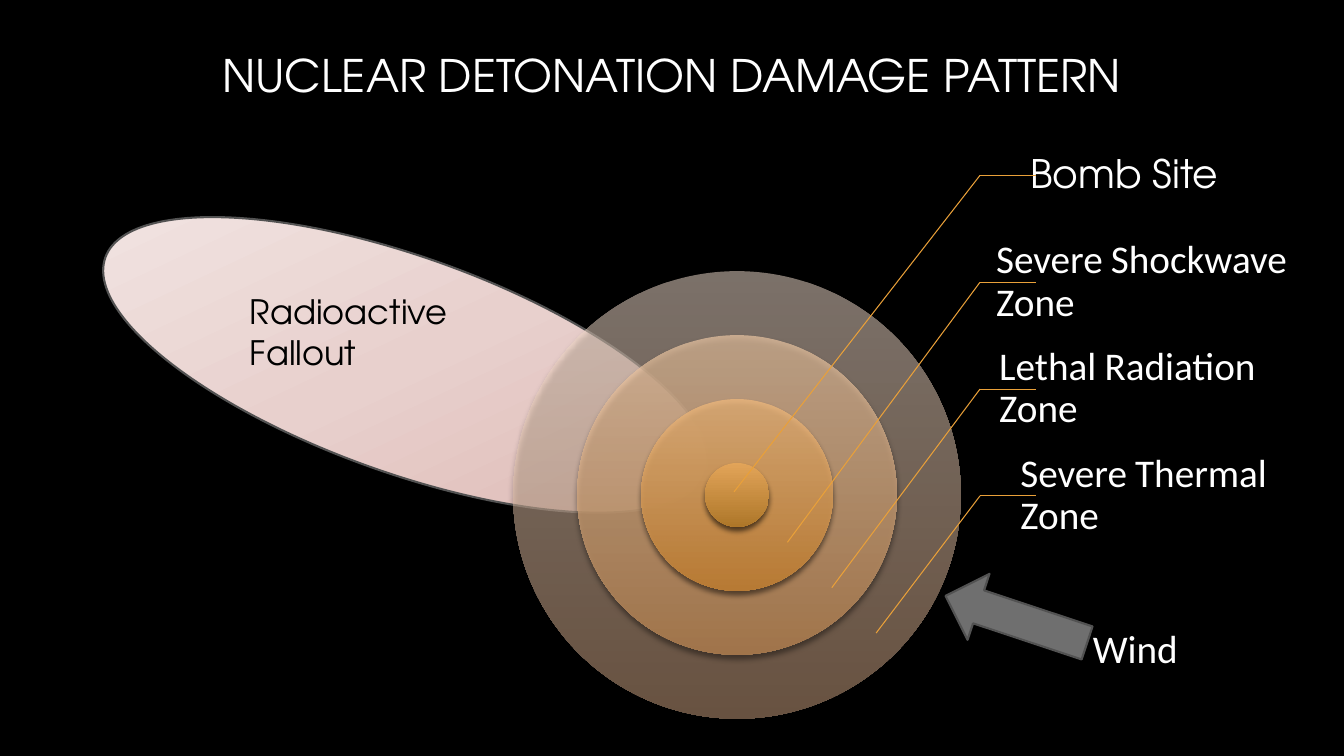
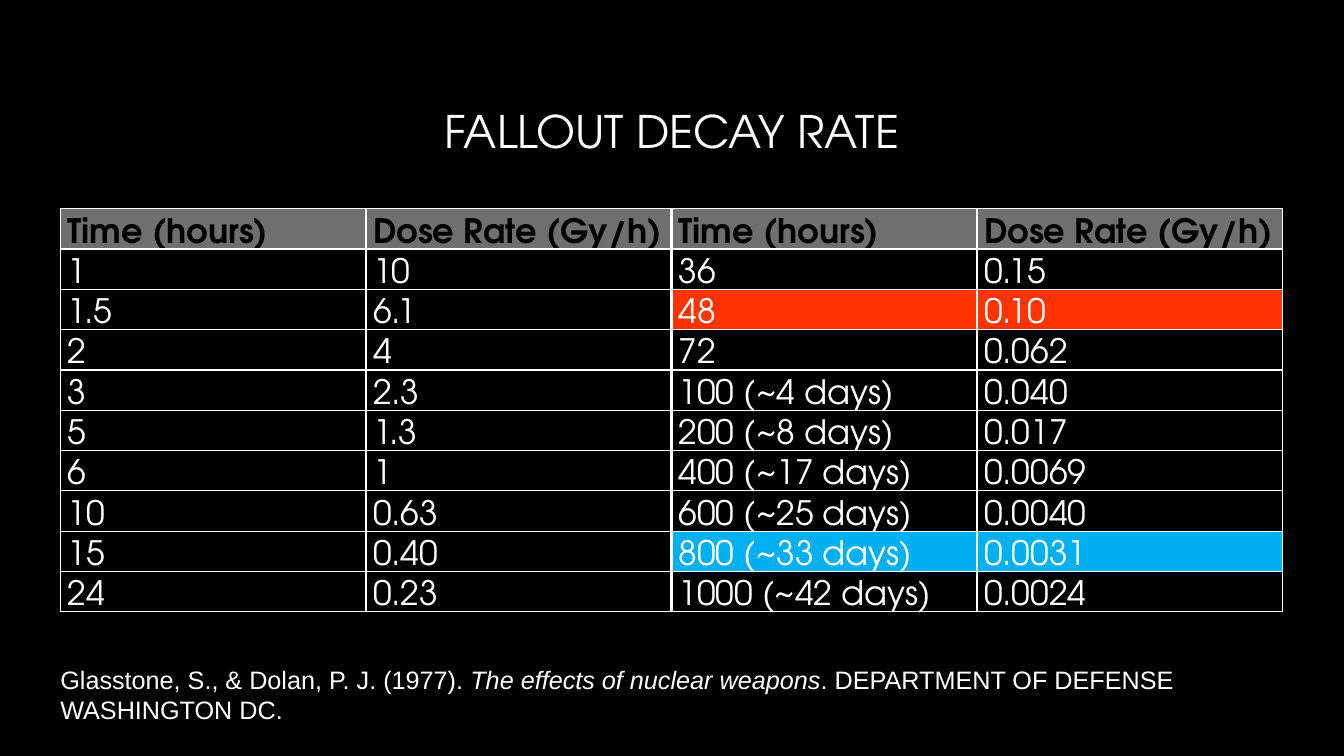
"""Two slides on nuclear detonation damage and fallout decay."""
from copy import deepcopy

from lxml import etree
from pptx import Presentation
from pptx.dml.color import RGBColor
from pptx.enum import shapes, text
from pptx.oxml.ns import qn
from pptx.util import Inches, Pt

BLACK = RGBColor(0, 0, 0)
WHITE = RGBColor(255, 255, 255)
SILVER = RGBColor(0xA6, 0xA6, 0xA6)
GRAY = RGBColor(0x6F, 0x6F, 0x6F)
OUTLINE = RGBColor(0x52, 0x52, 0x52)
ORANGE = RGBColor(0xE9, 0xA0, 0x39)
RED = RGBColor(0xFF, 0x33, 0x00)
BLUE = RGBColor(0x00, 0xB0, 0xF0)
FALLOUT_COLORS = [RGBColor.from_string(c) for c in ("DCB4AE", "E8D0CD", "F3E8E6")]
DISPLAY, BODY, CITATION = "TeX Gyre Adventor", "Calibri", "Arial"
INSETS = (0.1, 0.05, 0.1, 0.05)

ZONES = [
    (7, "F7E2D2", "D1A582", 50),
    (5, "F0CAA6", "CF945B", 67),
    (3, "E9B57C", "CB8636", 83),
    (1, "E2A459", "AE7729", 100),
]
CENTER, RING = (7.31, 4.91), 4.44 / 7
CALLOUTS = [
    ("Bomb Site", DISPLAY, 10, 2.22, (7.28, 4.88)),
    ("Severe Shockwave Zone", BODY, 9.66, 3.47, (7.81, 5.38)),
    ("Lethal Radiation Zone", BODY, 9.69, 3.39, (8.25, 5.83)),
    ("Severe Thermal Zone", BODY, 9.9, 2.99, (8.69, 6.28)),
]
CALLOUT_TOP, CALLOUT_PITCH = 1.21, 1.06
LEADER_LEFT, LEADER_RIGHT = 9.72, 10.28

HEADINGS = ("Time (hours)", "Dose Rate (Gy/h)") * 2
DECAY = [
    ("1", "10", "36", "0.15"),
    ("1.5", "6.1", "48", "0.10"),
    ("2", "4", "72", "0.062"),
    ("3", "2.3", "100 (~4 days)", "0.040"),
    ("5", "1.3", "200 (~8 days)", "0.017"),
    ("6", "1", "400 (~17 days)", "0.0069"),
    ("10", "0.63", "600 (~25 days)", "0.0040"),
    ("15", "0.40", "800 (~33 days)", "0.0031"),
    ("24", "0.23", "1000 (~42 days)", "0.0024"),
]
HIGHLIGHTS = {"48": RED, "800 (~33 days)": BLUE}
SOURCE = [
    ("Glasstone, S., & Dolan, P. J. (1977). ", False),
    ("The effects of nuclear weapons", True),
    (". DEPARTMENT OF DEFENSE WASHINGTON DC.", False),
]


def add_span(para, words, size, face, color=WHITE, bold=False, italic=False):
    span = para.add_run()
    span.text = words
    font = span.font
    font.size, font.name, font.bold, font.italic = Pt(size), face, bold, italic
    font.color.rgb = color
    return span


def add_box(page, area, insets=INSETS, anchor=text.MSO_ANCHOR.TOP):
    frame = page.shapes.add_textbox(*map(Inches, area)).text_frame
    frame.word_wrap = True
    frame.vertical_anchor = anchor
    (frame.margin_left, frame.margin_top,
     frame.margin_right, frame.margin_bottom) = map(Inches, insets)
    return frame.paragraphs[0]


def set_stops(fill, colors, angle):
    fill.gradient_angle = (360 - angle) % 360
    for i, (stop, color) in enumerate(zip(fill.gradient_stops, colors)):
        stop.color.rgb = color
        stop.position = i / (len(colors) - 1)


def paint_gradient(shape, colors, angle, opacity=100):
    shape.fill.gradient()
    stops = shape.element.spPr.find(".//" + qn("a:gsLst"))
    for _ in colors[2:]:
        stops.append(deepcopy(stops[-1]))
    set_stops(shape.fill, colors, angle)
    if opacity < 100:
        for color in stops.iter(qn("a:srgbClr")):
            etree.SubElement(color, qn("a:alpha"), val=str(opacity * 1000))


def add_preset(page, kind, area, rotation=0):
    shape = page.shapes.add_shape(kind, *map(Inches, area))
    shape.shadow.inherit = False
    shape.rotation = rotation
    return shape


def set_outline(shape):
    shape.line.color.rgb = OUTLINE
    shape.line.width = Pt(1.5)


def add_shadow(shape):
    effects = shape.element.spPr.find(qn("a:effectLst"))
    shadow = etree.SubElement(effects, qn("a:outerShdw"), blurRad=str(Pt(4)),
                              dist=str(Pt(3)), dir="5400000", rotWithShape="0")
    color = etree.SubElement(shadow, qn("a:srgbClr"), val=str(BLACK))
    etree.SubElement(color, qn("a:alpha"), val="60000")


def add_leader(page, start, end):
    line = page.shapes.add_connector(shapes.MSO_CONNECTOR.STRAIGHT,
                                     *map(Inches, start + end))
    line.line.color.rgb = ORANGE
    line.line.width = Pt(0.75)
    etree.SubElement(line.element.spPr, qn("a:effectLst"))


def add_page(deck, title, title_top):
    page = deck.slides.add_slide(deck.slide_layouts[6])
    para = add_box(page, (1.25, title_top, 10.83, 2.08), anchor=text.MSO_ANCHOR.MIDDLE)
    para.alignment = text.PP_ALIGN.CENTER
    fill = add_span(para, title, 32, DISPLAY).font.fill
    fill.gradient()
    set_stops(fill, (WHITE, SILVER), 93)
    return page


def add_callout(page, row, label, face, left, width, target):
    top = CALLOUT_TOP + row * CALLOUT_PITCH
    para = add_box(page, (left, top, width, CALLOUT_PITCH),
                   (0.22, 0.04, 0.04, 0.04), text.MSO_ANCHOR.MIDDLE)
    para.line_spacing = 0.9
    for i, word in enumerate(label.split()):
        if i:
            add_span(para, " ", 28 if face == DISPLAY else 21, DISPLAY)
        add_span(para, word, 28, face)
    corner = (LEADER_LEFT, top + CALLOUT_PITCH / 2)
    add_leader(page, corner, (LEADER_RIGHT, corner[1]))
    add_leader(page, corner, target)


def build_damage(deck):
    page = add_page(deck, "NUCLEAR DETONATION DAMAGE PATTERN", -0.3)
    oval = shapes.MSO_SHAPE.OVAL
    plume = add_preset(page, oval, (0.86, 2.55, 6.32, 2.14), 19.7)
    paint_gradient(plume, FALLOUT_COLORS, 225)
    set_outline(plume)
    for rings, light, dark, opacity in ZONES:
        size = rings * RING
        zone = add_preset(page, oval, (*(c - size / 2 for c in CENTER), size, size))
        paint_gradient(zone, [RGBColor.from_string(c) for c in (light, dark)], 90, opacity)
        zone.line.fill.background()
        add_shadow(zone)
    for row, callout in enumerate(CALLOUTS):
        add_callout(page, row, *callout)
    wind = add_preset(page, shapes.MSO_SHAPE.RIGHT_ARROW, (9.34, 5.8, 1.48, 0.69), 198.4)
    wind.fill.solid()
    wind.fill.fore_color.rgb = GRAY
    set_outline(wind)
    add_span(add_box(page, (10.74, 6.14, 1.48, 0.57)), "Wind", 28, BODY)
    add_span(add_box(page, (2.38, 2.84, 3.28, 0.91)),
             "Radioactive Fallout", 24, DISPLAY, BLACK)


def set_borders(cell, column):
    props = cell._tc.get_or_add_tcPr()
    widths = {"L": 3 if column == 2 else 1, "R": 3 if column == 1 else 1, "T": 1, "B": 1}
    for side, width in widths.items():
        line = etree.SubElement(props, qn("a:ln" + side), w=str(Pt(width)))
        fill = etree.SubElement(line, qn("a:solidFill"))
        etree.SubElement(fill, qn("a:srgbClr"), val=str(WHITE))


def fill_cell(cell, words, column, color, heading):
    cell.margin_left = cell.margin_right = Inches(0.07)
    cell.margin_top = cell.margin_bottom = 0
    cell.vertical_anchor = text.MSO_ANCHOR.BOTTOM
    set_borders(cell, column)
    if color is None:
        cell.fill.background()
    else:
        cell.fill.solid()
        cell.fill.fore_color.rgb = color
    para = cell.text_frame.paragraphs[0]
    para.line_spacing = 0.95
    add_span(para, words, 24, DISPLAY, BLACK if heading else WHITE, heading)


def build_decay(deck):
    page = add_page(deck, "FALLOUT DECAY RATE", 0.26)
    para = add_box(page, (0.5, 6.54, 12.12, 0.71))
    for words, italic in SOURCE:
        add_span(para, words, 18, CITATION, italic=italic)
    rows = [HEADINGS, *DECAY]
    table = page.shapes.add_table(len(rows), len(HEADINGS),
                                  *map(Inches, (0.6, 2.07, 12.12, 4))).table
    table.horz_banding = False
    for r, values in enumerate(rows):
        for c, words in enumerate(values):
            color = HIGHLIGHTS.get(values[2]) if c >= 2 else None
            fill_cell(table.cell(r, c), words, c, color if r else GRAY, r == 0)


def main():
    deck = Presentation()
    deck.slide_width, deck.slide_height = Inches(13.33), Inches(7.5)
    backdrop = deck.slide_master.background.fill
    backdrop.solid()
    backdrop.fore_color.rgb = BLACK
    build_damage(deck)
    build_decay(deck)
    deck.save("out.pptx")


if __name__ == "__main__":
    main()
